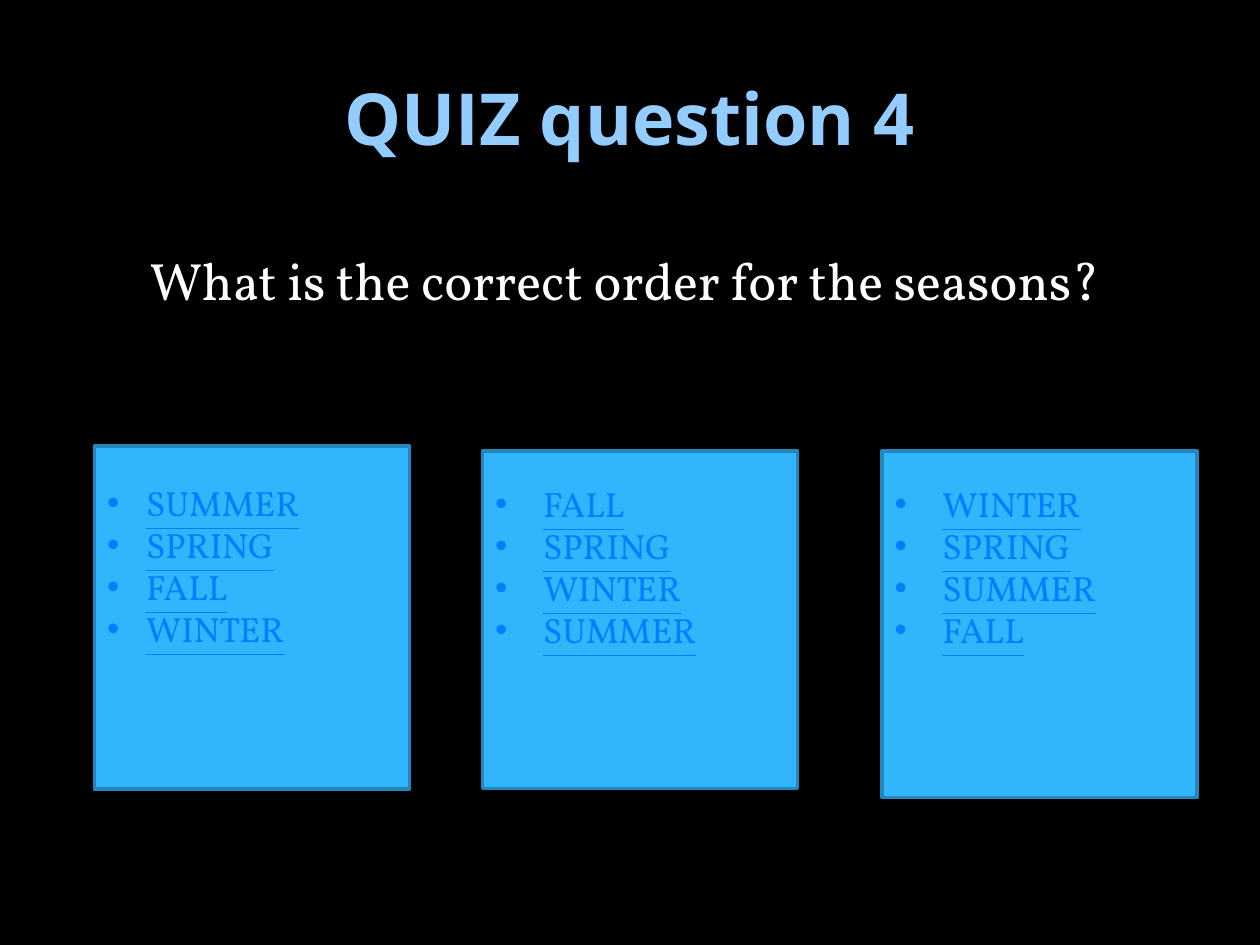
"""Build a quiz slide with three cards of ordered seasons."""
from pptx import Presentation
from pptx.dml.color import RGBColor
from pptx.enum import shapes, text
from pptx.oxml import parse_xml
from pptx.oxml.ns import nsdecls
from pptx.util import Inches, Pt


def tint(code):
    return RGBColor.from_string(code)


class Deck:
    head, body = "Open Sans", "Vollkorn"
    back, light, white = "000000", "93CDFF", "FFFFFF"
    card, edge, link = "31B6FD", "2487BB", "0080FF"

    def __init__(self, wide, high):
        self.prs = Presentation()
        self.prs.slide_width, self.prs.slide_height = Inches(wide), Inches(high)
        self.slide = self.prs.slides.add_slide(self.prs.slide_layouts[4])
        fill = self.slide.background.fill
        fill.solid()
        fill.fore_color.rgb = tint(self.back)

    def place(self, idx, box, lines, size, color, face, anchor, **looks):
        item = self.slide.placeholders[idx]
        item.left, item.top, item.width, item.height = map(Inches, box)
        self.slide.shapes._spTree.append(item._element)
        frame = item.text_frame
        frame.text = "\n".join(lines)
        frame.word_wrap = True
        frame.auto_size = text.MSO_AUTO_SIZE.NONE
        frame.vertical_anchor = anchor
        for para in frame.paragraphs:
            para.space_before = Pt(0)
            for run in para.runs:
                font = run.font
                font.name, font.size = face, Pt(size)
                font.color.rgb = tint(color)
                font.bold = looks.get("bold", False)
                font.underline = looks.get("under", False)
        return frame.paragraphs

    def title(self, box, line):
        paras = self.place(0, box, [line], 41, self.light, self.head,
                           text.MSO_ANCHOR.MIDDLE, bold=True)
        paras[0].alignment = text.PP_ALIGN.CENTER

    def ask(self, box, line):
        paras = self.place(1, box, [line], 30, self.white, self.body,
                           text.MSO_ANCHOR.TOP)
        paras[0].alignment = text.PP_ALIGN.CENTER

    def panel(self, box):
        rect = self.slide.shapes.add_shape(
            shapes.MSO_SHAPE.RECTANGLE, *map(Inches, box))
        rect.shadow.inherit = False
        rect.fill.solid()
        rect.fill.fore_color.rgb = tint(self.card)
        rect.line.color.rgb = tint(self.edge)
        rect.line.width = Pt(2)

    def list(self, idx, box, lines, indent):
        paras = self.place(idx, box, lines, 20, self.link, self.body,
                           text.MSO_ANCHOR.TOP, under=True)
        for para in paras:
            props = para._p.get_or_add_pPr()
            props.set("marL", str(Inches(indent)))
            props.set("indent", str(-Inches(indent)))
            for tag in ('buFont typeface="Arial"', 'buChar char="•"'):
                props.append(parse_xml(f"<a:{tag} {nsdecls('a')}/>"))


def main():
    deck = Deck(10, 7.5)
    deck.title((0.5, 0.3, 9, 1.25), "QUIZ question 4")
    deck.ask((0.75, 1.92, 8.42, 0.61),
             "What is the correct order for the seasons?")
    cards = [
        (0.75, 3.54, 2.72, 3.77, 0.31, "SUMMER SPRING FALL WINTER"),
        (3.83, 3.58, 2.68, 3.78, 0.38, "FALL SPRING WINTER SUMMER"),
        (7, 3.58, 2.75, 3.78, 0.38, "WINTER SPRING SUMMER FALL"),
    ]
    for idx, (left, top, high, start, indent, names) in enumerate(cards, 2):
        deck.panel((left, top, 2.5, high))
        deck.list(idx, (left, start, 2.5, 1.45), names.split(), indent)
    deck.prs.save("out.pptx")


if __name__ == "__main__":
    main()
